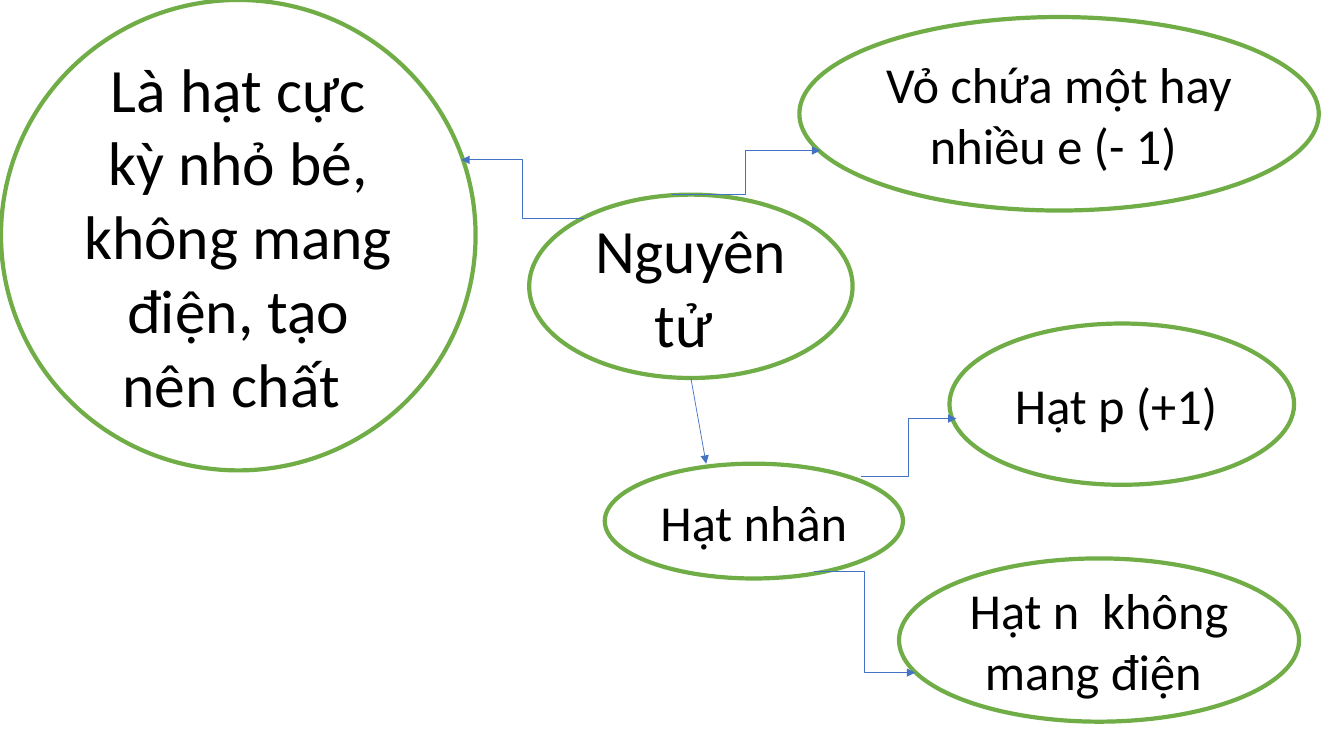
from collections import namedtuple

from lxml.etree import SubElement
from pptx import Presentation
from pptx.dml.color import RGBColor
from pptx.enum.shapes import MSO_CONNECTOR, MSO_SHAPE
from pptx.enum.text import MSO_ANCHOR, PP_ALIGN
from pptx.oxml.ns import qn
from pptx.util import Pt

WHITE = RGBColor(0xFF, 0xFF, 0xFF)
BLACK = RGBColor(0, 0, 0)
GREEN = RGBColor(0x70, 0xAD, 0x47)
BLUE = RGBColor(0x44, 0x72, 0xC4)

Box = namedtuple("Box", "left top width height")

ATOM = Box(378, 139, 231, 131)
DEFINITION = Box(0.7, 0, 339, 336)
SHELL = Box(571, 12.2, 371, 138.2)
NUCLEUS = Box(432, 331.2, 213, 82)
PROTON = Box(678.2, 231.1, 246.2, 115.2)
NEUTRON = Box(642.2, 398.9, 285.8, 116.6)

CONCEPTS = [
    (ATOM, "Nguyên tử ", 44),
    (DEFINITION, "Là hạt cực kỳ nhỏ bé, không mang điện, tạo nên chất ", 44),
    (SHELL, "Vỏ chứa một hay nhiều e (- 1) ", 36),
    (NUCLEUS, "Hạt nhân ", 36),
    (PROTON, "Hạt p (+1) ", 36),
    (NEUTRON, "Hạt n  không mang điện ", 36),
]

# Each end is a concept and the fractions of its width and height
ARROWS = [
    (MSO_CONNECTOR.ELBOW, ATOM, (0.17, 0.13), DEFINITION, (0.97, 0.34)),
    (MSO_CONNECTOR.ELBOW, ATOM, (0.44, 0), SHELL, (0.04, 0.69)),
    (MSO_CONNECTOR.STRAIGHT, ATOM, (0.5, 1), NUCLEUS, (0.34, 0)),
    (MSO_CONNECTOR.ELBOW, NUCLEUS, (0.7, 0.94), NEUTRON, (0.04, 0.7)),
    (MSO_CONNECTOR.ELBOW, NUCLEUS, (0.86, 0.11), PROTON, (0.02, 0.59)),
]


def add_concept(slide, box, wording, size):
    concept = slide.shapes.add_shape(MSO_SHAPE.OVAL, *map(Pt, box))
    concept.shadow.inherit = False
    concept.fill.solid()
    concept.fill.fore_color.rgb = WHITE
    concept.line.color.rgb = GREEN
    concept.line.width = Pt(3)
    frame = concept.text_frame
    frame.word_wrap = True
    frame.vertical_anchor = MSO_ANCHOR.MIDDLE
    frame.text = wording
    paragraph = frame.paragraphs[0]
    paragraph.alignment = PP_ALIGN.CENTER
    font = paragraph.runs[0].font
    font.name = "Calibri"
    font.size = Pt(size)
    font.color.rgb = BLACK


def point_in(box, fractions):
    across, down = fractions
    return Pt(box.left + across * box.width), Pt(box.top + down * box.height)


def add_arrow(slide, kind, source, start, target, end):
    arrow = slide.shapes.add_connector(
        kind, *point_in(source, start), *point_in(target, end))
    arrow.line.color.rgb = BLUE
    arrow.line.width = Pt(0.5)
    # Arrowhead at the target, and no shadow
    properties = arrow._element.spPr
    SubElement(properties.find(qn("a:ln")), qn("a:tailEnd"), type="triangle")
    SubElement(properties, qn("a:effectLst"))


def build_atom_map(slide):
    # Concept ellipses
    for concept in CONCEPTS:
        add_concept(slide, *concept)
    # Arrows between concepts
    for arrow in ARROWS:
        add_arrow(slide, *arrow)


def main():
    deck = Presentation()
    deck.slide_width = Pt(960)
    deck.slide_height = Pt(540)
    build_atom_map(deck.slides.add_slide(deck.slide_layouts[6]))
    deck.save("out.pptx")


if __name__ == "__main__":
    main()
